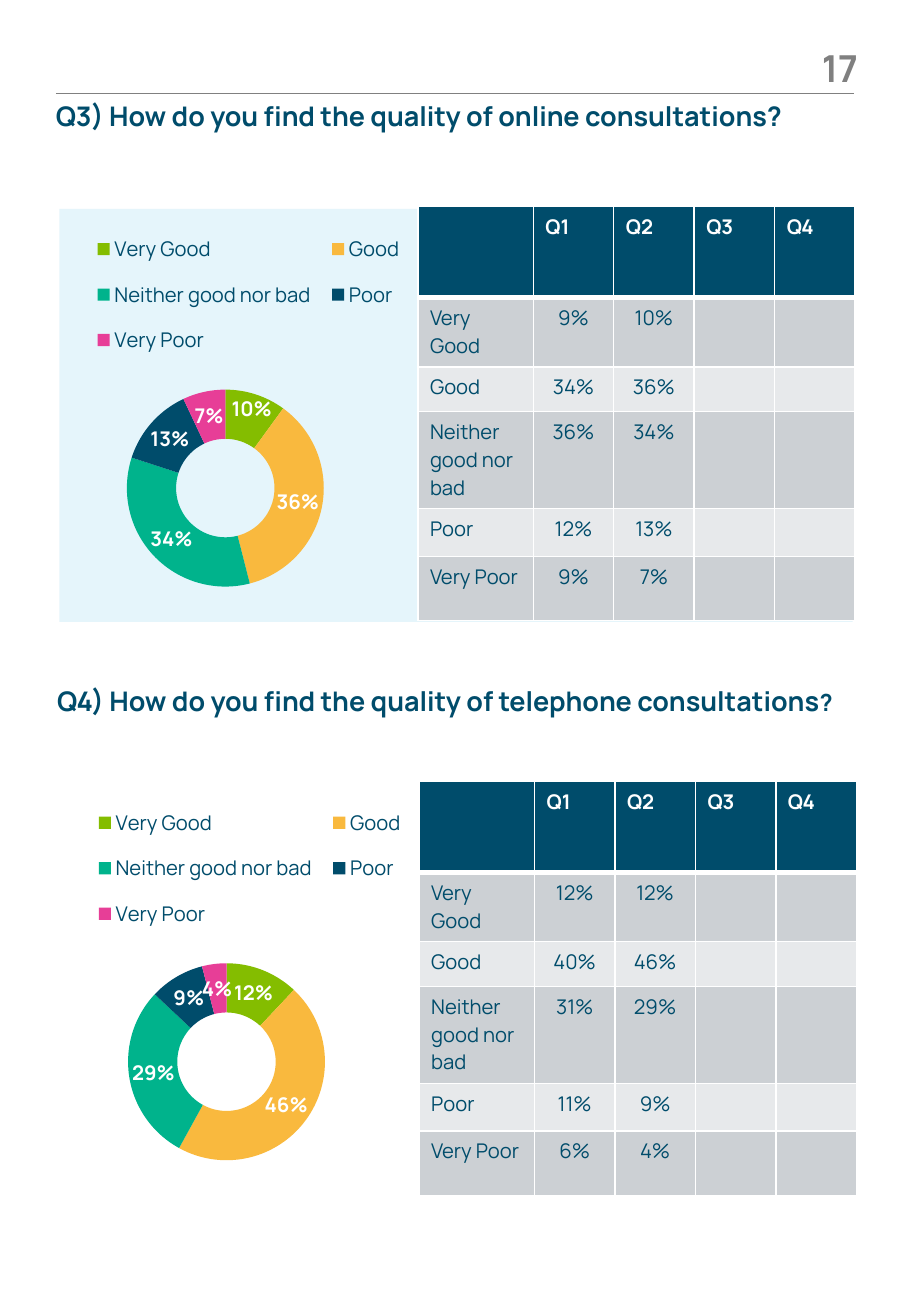
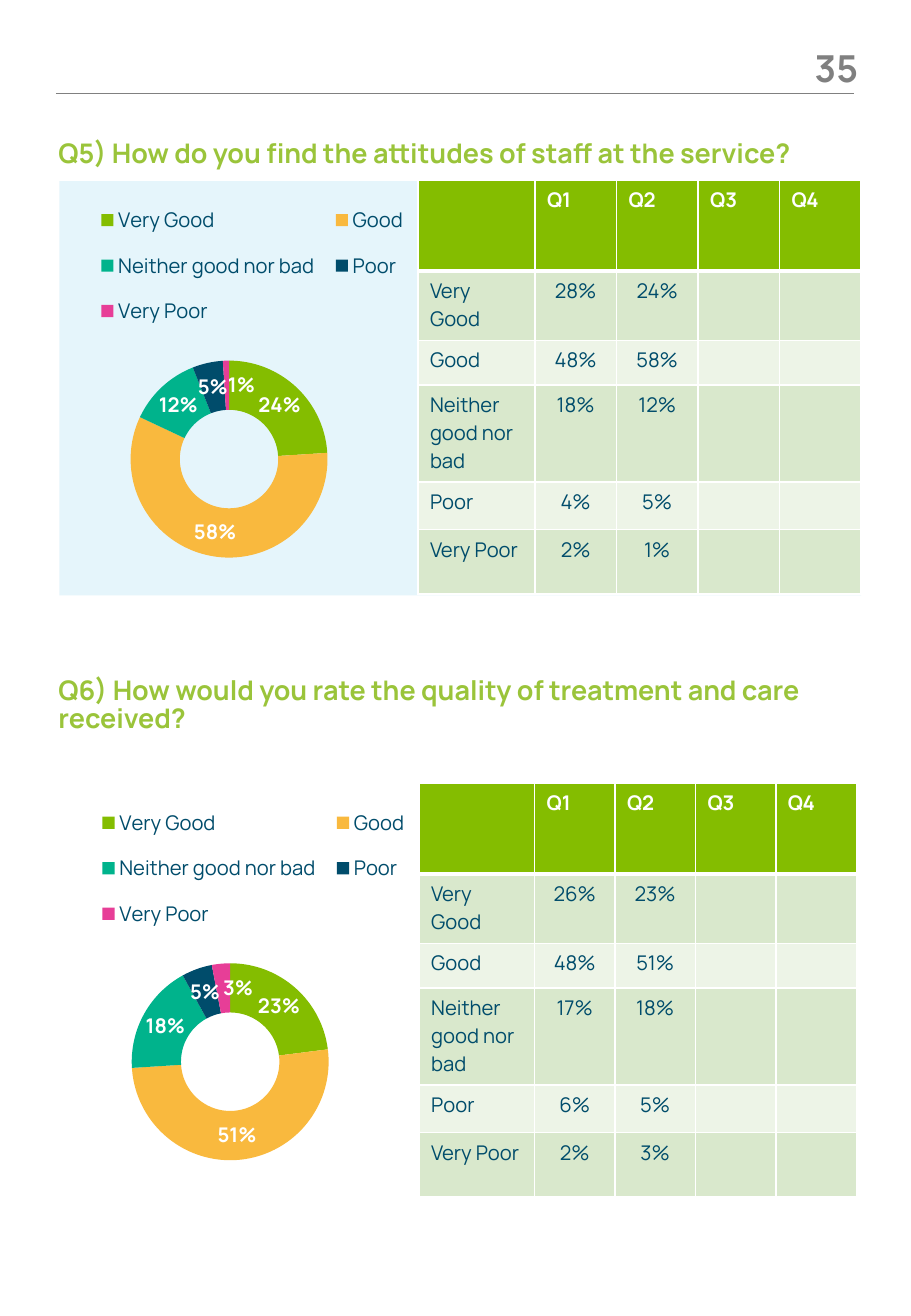
from lxml.etree import SubElement
from pptx import Presentation
from pptx.chart.data import CategoryChartData
from pptx.dml.color import RGBColor
from pptx.enum.chart import XL_CHART_TYPE as ChartType, XL_LEGEND_POSITION as LegendPosition
from pptx.enum.shapes import MSO_CONNECTOR as Connector, MSO_SHAPE as Shape
from pptx.enum.text import MSO_ANCHOR as Anchor, MSO_AUTO_SIZE as AutoSize, PP_ALIGN as Align
from pptx.oxml.ns import qn
from pptx.util import Pt

COLORS = {
    "navy": "004C6B", "green": "84BD00", "lime": "9AC43A", "amber": "F9B93E",
    "teal": "00B38C", "pink": "E73E97", "gray": "808080", "white": "FFFFFF",
    "panel": "E5F5FB", "gray_dark": "CCD0D4", "gray_light": "E7E9EB",
    "green_dark": "D9E8CC", "green_light": "EDF4E7",
}
THEMES = {
    "navy": {"title": "navy", "header": "navy", "bands": ("gray_dark", "gray_light")},
    "green": {"title": "lime", "header": "green", "bands": ("green_dark", "green_light")},
}
ANSWERS = ["Very Good", "Good", "Neither good nor bad", "Poor", "Very Poor"]
ANSWER_COLORS = ["green", "amber", "teal", "navy", "pink"]
QUARTERS = ["Q1", "Q2", "Q3", "Q4"]
ROW_HEIGHTS = [54, 41, 26.6, 57.4, 28.3, 38.2]
LABEL_SHARE = 0.264
CHART_SIZE = (220.3, 260.6)
PLOT_LAYOUT = (0.178, 0.411, 0.53, 0.448)
LEGEND_LAYOUT = (0.06, 0.02, 0.89, 0.35)

PAGES = [
    {"number": "17", "theme": "navy", "questions": [
        {"runs": [("Q3) How do you find the quality of online consultations?", 16)],
         "title": (33.1, 61.2, 438.5, 17.3), "panel": (35.3, 123.8, 470.2, 244.8),
         "chart": (36, 123.8), "table": (247.7, 122.4, 259.2),
         "label_shifts": {0: (0.01, -0.02)},
         "results": [(9, 34, 36, 12, 9), (10, 36, 34, 13, 7)]},
        {"runs": [("Q4) How do you find the quality of telephone consultations", 16), ("?", 14)],
         "title": (33.8, 407.5, 480, 19.4),
         "chart": (36.7, 463.7), "table": (248.4, 463, 259.2),
         "label_shifts": {},
         "results": [(12, 40, 31, 11, 6), (12, 46, 29, 9, 4)]},
    ]},
    {"number": "35", "theme": "green", "questions": [
        {"runs": [("Q5) How do you find the attitudes of staff at the service?", 16)],
         "title": (34.6, 82.8, 473.8, 20.9), "panel": (35.3, 107.3, 475.2, 245.5),
         "chart": (38.2, 106.6), "table": (247.7, 106.6, 262.8),
         "label_shifts": {4: (0.04, 0)},
         "results": [(28, 48, 18, 4, 2), (24, 58, 12, 5, 1)]},
        {"runs": [("Q6) How would you rate the quality of treatment and care received?", 16)],
         "title": (34.6, 401, 478, 19.4),
         "chart": (38.9, 463.7), "table": (248.4, 463.9, 259.2),
         "label_shifts": {4: (0.04, 0)},
         "results": [(26, 48, 17, 6, 2), (23, 51, 18, 5, 3)]},
    ]},
]


def color(name):
    return RGBColor.from_string(COLORS[name])


def points(box):
    return [Pt(length) for length in box]


class Report:
    font_name = "Manrope"

    def __init__(self):
        self.presentation = Presentation()
        self.presentation.slide_width = Pt(540)
        self.presentation.slide_height = Pt(779.76)
        self.slide = None
        self.theme = None

    def style_font(self, font, size, color_name, bold=False):
        font.name = self.font_name
        font.size = Pt(size)
        font.bold = bold
        font.color.rgb = color(color_name)

    def add_run(self, paragraph, text, size, color_name, bold=False):
        run = paragraph.add_run()
        run.text = text
        self.style_font(run.font, size, color_name, bold)

    def start_page(self, number, theme):
        self.slide = self.presentation.slides.add_slide(self.presentation.slide_layouts[5])
        self.theme = THEMES[theme]
        line = self.slide.shapes.add_connector(Connector.STRAIGHT, *points((33.1, 55.4, 506.2, 55.4)))
        line.line.color.rgb = color("gray")
        line.line.width = Pt(0.75)
        SubElement(line._element.spPr, qn("a:effectLst"))
        shape = self.slide.shapes.add_textbox(*points((462.5, 27, 46.1, 28.1)))
        paragraph = self.prepare_text(shape)
        paragraph.alignment = Align.RIGHT
        self.add_run(paragraph, number, 22, "gray", True)

    def prepare_text(self, shape):
        frame = shape.text_frame
        frame.word_wrap = True
        frame.auto_size = AutoSize.NONE
        frame.vertical_anchor = Anchor.TOP
        frame.margin_left = frame.margin_top = frame.margin_right = frame.margin_bottom = 0
        return frame.paragraphs[0]

    def add_heading(self, runs, box, is_title):
        if is_title:
            shape = self.slide.shapes.title
            shape.left, shape.top, shape.width, shape.height = points(box)
        else:
            shape = self.slide.shapes.add_textbox(*points(box))
        paragraph = self.prepare_text(shape)
        paragraph.alignment = Align.LEFT
        paragraph.line_spacing = Pt(17)
        paragraph.space_before = Pt(0)
        paragraph.space_after = Pt(9)
        for text, size in runs:
            self.add_run(paragraph, text, size, self.theme["title"], True)

    def add_panel(self, box):
        shape = self.slide.shapes.add_shape(Shape.RECTANGLE, *points(box))
        shape.shadow.inherit = False
        shape.fill.solid()
        shape.fill.fore_color.rgb = color("panel")
        shape.line.fill.background()

    def set_layout(self, element, box, index, target=None, mode="edge"):
        for old in element.findall(qn("c:layout")):
            element.remove(old)
        layout = SubElement(element, qn("c:layout"))
        manual = SubElement(layout, qn("c:manualLayout"))
        if target:
            SubElement(manual, qn("c:layoutTarget"), val=target)
        for tag in ("xMode", "yMode"):
            SubElement(manual, qn(f"c:{tag}"), val=mode)
        for tag, value in zip("xywh", box):
            SubElement(manual, qn(f"c:{tag}"), val=str(value))
        element.insert(index, layout)

    def shift_label(self, point, shift):
        label = point.data_label
        self.style_font(label.font, 12, "white", True)
        element = label._get_or_add_dLbl()
        element.find(qn("c:showVal")).set("val", "0")
        element.find(qn("c:showPercent")).set("val", "1")
        number_format = SubElement(element, qn("c:numFmt"), formatCode="0%", sourceLinked="0")
        element.insert(1, number_format)
        self.set_layout(element, shift, 1, mode="factor")

    def add_doughnut(self, position, values, label_shifts):
        data = CategoryChartData(number_format="0")
        data.categories = ANSWERS
        data.add_series("Series 1", values)
        chart = self.slide.shapes.add_chart(
            ChartType.DOUGHNUT, *points(position + CHART_SIZE), data).chart
        self.style_font(chart.font, 10, "navy")
        chart.has_title = False
        chart.has_legend = True
        legend = chart.legend
        legend.position = LegendPosition.TOP
        legend.include_in_layout = False
        self.style_font(legend.font, 12, "navy")
        self.set_layout(legend._element, LEGEND_LAYOUT, 1)
        self.set_layout(chart._chartSpace.chart.plotArea, PLOT_LAYOUT, 0, "inner")
        plot = chart.plots[0]
        plot.vary_by_categories = True
        series = plot.series[0]
        for index, name in enumerate(ANSWER_COLORS):
            point_format = series.points[index].format
            point_format.fill.solid()
            point_format.fill.fore_color.rgb = color(name)
            point_format.line.fill.background()
        labels = series.data_labels
        labels.show_value = False
        labels.show_percentage = True
        labels.number_format = "0%"
        labels.number_format_is_linked = False
        self.style_font(labels.font, 12, "white", True)
        for index, shift in label_shifts.items():
            self.shift_label(series.points[index], shift)

    def set_borders(self, cell, row):
        properties = cell._tc.get_or_add_tcPr()
        widths = {"L": 1, "R": 1, "T": 3 if row == 1 else 1, "B": 3 if row == 0 else 1}
        for side, width in widths.items():
            line = SubElement(properties, qn(f"a:ln{side}"), w=str(Pt(width)))
            fill = SubElement(line, qn("a:solidFill"))
            SubElement(fill, qn("a:srgbClr"), val=COLORS["white"])

    def add_table(self, left, top, width, results):
        columns = [[f"{value}%" for value in column] for column in results]
        columns += [[""] * len(ANSWERS)] * (len(QUARTERS) - len(results))
        rows = [["", *QUARTERS], *zip(ANSWERS, *columns)]
        table = self.slide.shapes.add_table(
            len(rows), len(rows[0]), *points((left, top, width, sum(ROW_HEIGHTS)))).table
        table.horz_banding = False
        label_width = width * LABEL_SHARE
        for index, column in enumerate(table.columns):
            column.width = Pt(label_width if index == 0 else (width - label_width) / len(QUARTERS))
        for row, texts in enumerate(rows):
            table.rows[row].height = Pt(ROW_HEIGHTS[row])
            fill_name = self.theme["bands"][(row - 1) % 2] if row else self.theme["header"]
            for column, text in enumerate(texts):
                cell = table.cell(row, column)
                self.set_borders(cell, row)
                cell.fill.solid()
                cell.fill.fore_color.rgb = color(fill_name)
                paragraph = cell.text_frame.paragraphs[0]
                paragraph.alignment = Align.CENTER if row and column else Align.LEFT
                if text:
                    self.add_run(paragraph, text, 12, "navy" if row else "white", row == 0)
                else:
                    SubElement(paragraph._p, qn("a:endParaRPr"), sz="1200")

    def add_question(self, question, is_title):
        if "panel" in question:
            self.add_panel(question["panel"])
        self.add_heading(question["runs"], question["title"], is_title)
        self.add_doughnut(question["chart"], question["results"][-1], question["label_shifts"])
        self.add_table(*question["table"], question["results"])


def main():
    report = Report()
    for page in PAGES:
        report.start_page(page["number"], page["theme"])
        for index, question in enumerate(page["questions"]):
            report.add_question(question, index == 0)
    report.presentation.save("out.pptx")


if __name__ == "__main__":
    main()
